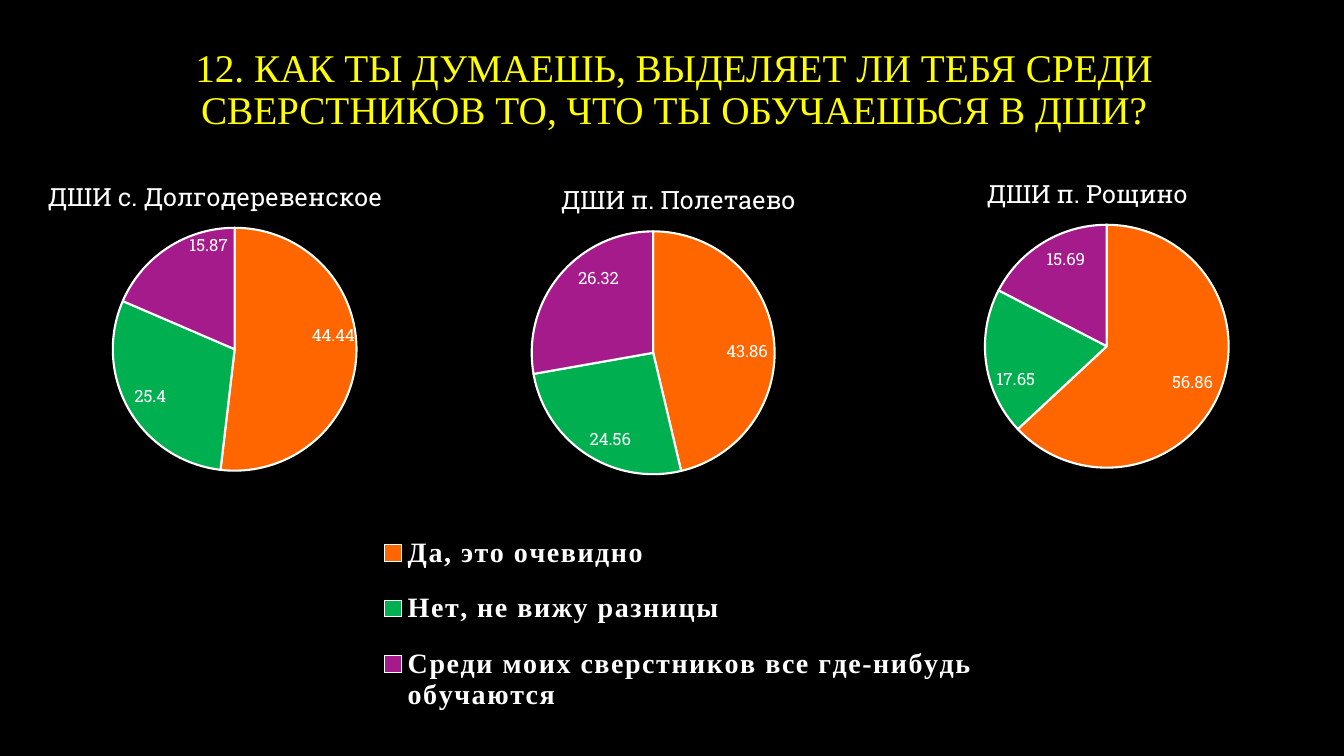
from dataclasses import dataclass

from lxml import etree
from pptx import Presentation
from pptx.chart.data import CategoryChartData
from pptx.dml.color import RGBColor
from pptx.enum.chart import XL_CHART_TYPE, XL_LABEL_POSITION, XL_LEGEND_POSITION
from pptx.enum.text import MSO_ANCHOR, PP_ALIGN
from pptx.oxml.ns import qn
from pptx.util import Inches, Pt


@dataclass(frozen=True)
class Theme:
    background = RGBColor(0x00, 0x00, 0x00)
    text = RGBColor(0xFF, 0xFF, 0xFF)
    heading = RGBColor(0xFF, 0xFF, 0x00)
    slices = (RGBColor(0xFF, 0x66, 0x00), RGBColor(0x00, 0xB0, 0x50),
              RGBColor(0xA5, 0x1B, 0x8B))
    serif = "Times New Roman"
    slab = "Roboto Slab"
    heading_size = Pt(28)
    legend_size = Pt(20)
    chart_title_size = Pt(18)
    label_size = Pt(12)
    chart_size = Pt(10)


theme = Theme()


def set_font(font, color, **values):
    for name, value in values.items():
        setattr(font, name, value)
    font.color.rgb = color


def set_layout(parent, index, inner=False, edge=True, **place):
    """Give a chart part a manual layout, in fractions of the chart."""
    for old in parent.findall(qn("c:layout")):
        parent.remove(old)
    layout = etree.Element(qn("c:layout"))
    manual = etree.SubElement(layout, qn("c:manualLayout"))
    settings = {"layoutTarget": "inner"} if inner else {}
    if edge:
        settings.update(xMode="edge", yMode="edge")
    settings.update(place)
    for name, value in settings.items():
        etree.SubElement(manual, qn(f"c:{name}")).set("val", str(value))
    parent.insert(index, layout)


presentation = Presentation()
presentation.slide_width = Inches(13.33)
presentation.slide_height = Inches(7.5)
slide = presentation.slides.add_slide(presentation.slide_layouts[5])
slide.background.fill.solid()
slide.background.fill.fore_color.rgb = theme.background

# Heading
heading = slide.shapes.title
heading.left, heading.top = Inches(0.41), Inches(0.23)
heading.width, heading.height = Inches(12.55), Inches(1.34)
heading.text_frame.text = ("12. КАК ТЫ ДУМАЕШЬ, ВЫДЕЛЯЕТ ЛИ ТЕБЯ СРЕДИ "
                           "СВЕРСТНИКОВ ТО, ЧТО ТЫ ОБУЧАЕШЬСЯ В ДШИ?")
heading.text_frame.word_wrap = True
heading.text_frame.vertical_anchor = MSO_ANCHOR.MIDDLE
paragraph = heading.text_frame.paragraphs[0]
paragraph.alignment = PP_ALIGN.CENTER
paragraph.line_spacing = 0.9
set_font(paragraph.runs[0].font, theme.heading,
         name=theme.serif, size=theme.heading_size)

# Schools: frame in inches, plot area in fractions, shifts of single labels
numbers = ("1", "2", "3")
answers = ("Да, это очевидно", "Нет, не вижу разницы",
           "Среди моих сверстников все где-нибудь обучаются")
side_plot = dict(x=0.084, y=0.215, w=0.916, h=0.785)
middle_plot = dict(x=0.28, y=0.109, w=0.364, h=0.45)
schools = [
    ("ДШИ с. Долгодеревенское", (-0.16, 1.6, 4.59, 3.08), numbers,
     (44.44, 25.4, 15.87), side_plot, {0: (0.01, -0.07), 2: (0.04, -0.06)}),
    ("ДШИ п. Полетаево", (3.42, 1.57, 6.62, 5.78), answers,
     (43.86, 24.56, 26.32), middle_plot, {2: (0.02, -0.02)}),
    ("ДШИ п. Рощино", (8.49, 1.57, 4.59, 3.08), numbers,
     (56.86, 17.65, 15.69), side_plot, {1: (0.01, 0.09)}),
]

# Pie charts
for name, frame, categories, values, plot_place, shifts in schools:
    data = CategoryChartData()
    data.categories = categories
    data.add_series("Series 1", values)
    chart = slide.shapes.add_chart(
        XL_CHART_TYPE.PIE, *map(Inches, frame), data).chart
    set_font(chart.font, theme.text, name=theme.slab, size=theme.chart_size)

    chart.has_title = True
    chart.chart_title.include_in_layout = False
    chart.chart_title.text_frame.text = name
    title_run = chart.chart_title.text_frame.paragraphs[0].runs[0]
    set_font(title_run.font, theme.text, name=theme.slab,
             size=theme.chart_title_size, bold=False)

    plot = chart.plots[0]
    plot.vary_by_categories = True
    set_layout(chart.element.find(".//" + qn("c:plotArea")), 0,
               inner=True, **plot_place)
    series = plot.series[0]
    for index, color in enumerate(theme.slices):
        point_format = series.points[index].format
        point_format.fill.solid()
        point_format.fill.fore_color.rgb = color
        point_format.line.color.rgb = theme.text
        point_format.line.width = Pt(1.5)

    # Value labels
    labels = series.data_labels
    labels.show_value = True
    labels.position = XL_LABEL_POSITION.INSIDE_END
    set_font(labels.font, theme.text, name=theme.slab, size=theme.label_size)
    for index, (x, y) in shifts.items():
        label = series.points[index].data_label
        set_font(label.font, theme.text, name=theme.slab, size=theme.label_size)
        label.position = XL_LABEL_POSITION.INSIDE_END
        element = labels._element.find(f"{qn('c:dLbl')}[{index and 'last()' or 1}]")
        set_layout(element, 1, edge=False, x=x, y=y)

    # One legend serves all three charts
    chart.has_legend = categories is answers
    if chart.has_legend:
        legend = chart.legend
        legend.position = XL_LEGEND_POSITION.BOTTOM
        legend.include_in_layout = False
        set_font(legend.font, theme.text, name=theme.serif,
                 size=theme.legend_size, bold=True)
        legend._element.find(".//" + qn("a:defRPr")).set("spc", "100")
        set_layout(legend._element, 1, x=0.03, y=0.61, w=0.94, h=0.38)

presentation.save("out.pptx")
